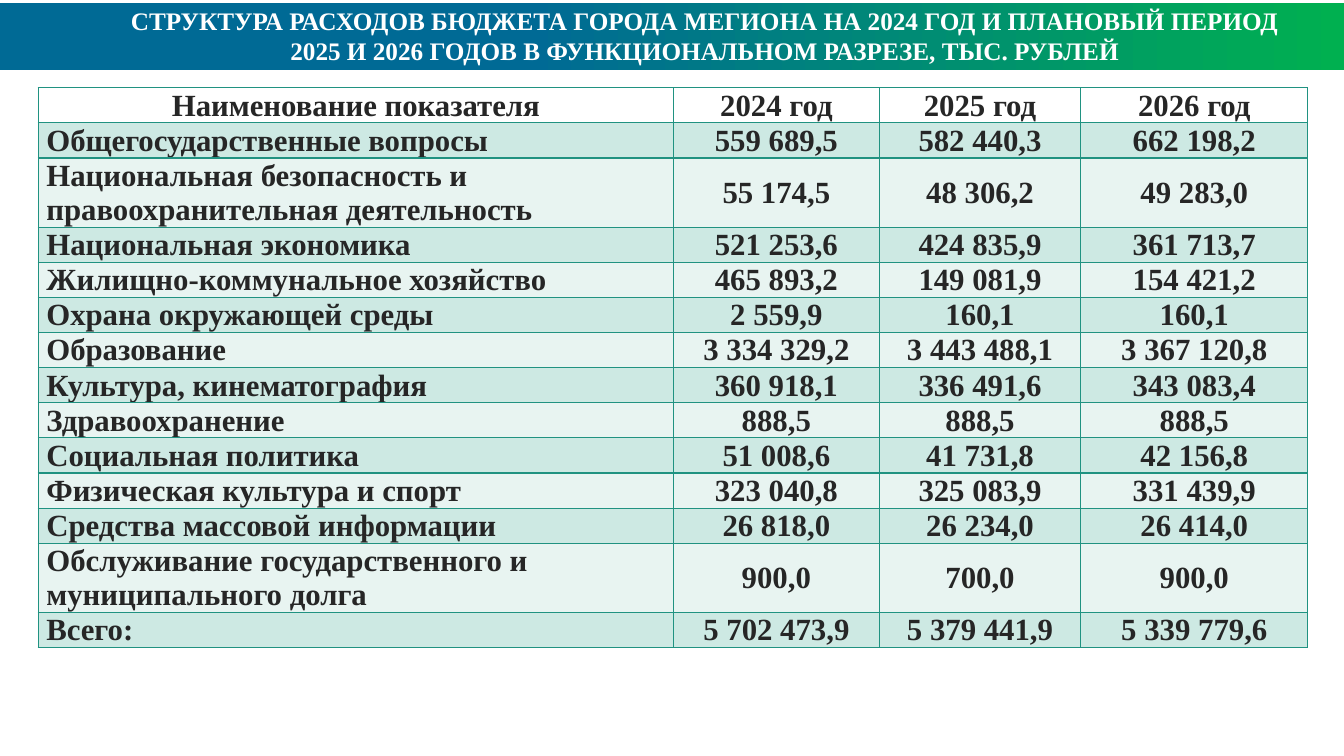
import pptx
import pptx.dml.color
import pptx.enum.shapes
import pptx.enum.text
import pptx.oxml
import pptx.oxml.ns
import pptx.util

Inches = pptx.util.Inches
Pt = pptx.util.Pt
RGB = pptx.dml.color.RGBColor.from_string
ALIGN = pptx.enum.text.PP_ALIGN
ANCHOR = pptx.enum.text.MSO_ANCHOR

HEADING = (
    "СТРУКТУРА РАСХОДОВ БЮДЖЕТА ГОРОДА МЕГИОНА НА 2024 ГОД И ПЛАНОВЫЙ ПЕРИОД",
    "2025 И 2026 ГОДОВ В ФУНКЦИОНАЛЬНОМ РАЗРЕЗЕ, ТЫС. РУБЛЕЙ",
)
COLUMNS = ("Наименование показателя", "2024 год", "2025 год", "2026 год")
EXPENSES = [
    ("Общегосударственные вопросы", "559 689,5", "582 440,3", "662 198,2"),
    ("Национальная безопасность и правоохранительная деятельность",
     "55 174,5", "48 306,2", "49 283,0"),
    ("Национальная экономика", "521 253,6", "424 835,9", "361 713,7"),
    ("Жилищно-коммунальное хозяйство", "465 893,2", "149 081,9", "154 421,2"),
    ("Охрана окружающей среды", "2 559,9", "160,1", "160,1"),
    ("Образование", "3 334 329,2", "3 443 488,1", "3 367 120,8"),
    ("Культура, кинематография", "360 918,1", "336 491,6", "343 083,4"),
    ("Здравоохранение", "888,5", "888,5", "888,5"),
    ("Социальная политика", "51 008,6", "41 731,8", "42 156,8"),
    ("Физическая культура и спорт", "323 040,8", "325 083,9", "331 439,9"),
    ("Средства массовой информации", "26 818,0", "26 234,0", "26 414,0"),
    ("Обслуживание государственного и муниципального долга",
     "900,0", "700,0", "900,0"),
    ("Всего:", "5 702 473,9", "5 379 441,9", "5 339 779,6"),
]
COLUMN_WIDTHS = (6.3, 2.04, 2, 2.25)
LINE_HEIGHT = 0.34
CHARS_PER_LINE = 40

THEME = {
    "font": "Times New Roman",
    "heading_size": 18,
    "table_size": 22,
    "heading_text": "FFFFFF",
    "table_text": "262626",
    "band": ((0.39, "006A95"), (1, "00B050")),
    "header_fill": "FFFFFF",
    "row_fills": ("CDE9E3", "E8F4F1"),
    "border": "209281",
    "border_width": 1,
}


def apply(target, values):
    for name, value in values.items():
        setattr(target, name, value)


def style_runs(paragraph, size, color):
    for run in paragraph.runs:
        apply(run.font, {"name": THEME["font"], "size": Pt(size), "bold": True})
        run.font.color.rgb = RGB(color)


def add_borders(cell):
    properties = cell._tc.get_or_add_tcPr()
    for position, side in enumerate("LRTB"):
        properties.insert(position, pptx.oxml.parse_xml(
            f'<a:ln{side} {pptx.oxml.ns.nsdecls("a")} w="{Pt(THEME["border_width"])}">'
            f'<a:solidFill><a:srgbClr val="{THEME["border"]}"/></a:solidFill>'
            f'</a:ln{side}>'))


def add_band(slide, width):
    band = slide.shapes.add_shape(
        pptx.enum.shapes.MSO_SHAPE.RECTANGLE, 0, Inches(0.03), width, Inches(0.67))
    band.shadow.inherit = False
    band.line.fill.background()
    band.fill.gradient()
    band.fill.gradient_angle = 0
    for stop, (position, color) in zip(band.fill.gradient_stops, THEME["band"]):
        stop.color.rgb = RGB(color)
        stop.position = position


def add_heading(slide):
    heading = slide.shapes.add_textbox(
        Inches(0.68), 0, Inches(12.62), Inches(0.71)).text_frame
    heading.word_wrap = True
    heading.text = "\v".join(HEADING)
    heading.paragraphs[0].alignment = ALIGN.CENTER
    style_runs(heading.paragraphs[0], THEME["heading_size"], THEME["heading_text"])


def add_expense_table(slide):
    rows = [COLUMNS, *EXPENSES]
    heights = [LINE_HEIGHT * (2 if len(row[0]) > CHARS_PER_LINE else 1) for row in rows]
    expenses = slide.shapes.add_table(
        len(rows), len(COLUMNS), Inches(0.38), Inches(0.87),
        Inches(sum(COLUMN_WIDTHS)), Inches(sum(heights))).table
    apply(expenses, {"first_row": False, "horz_banding": False})
    for column, width in zip(expenses.columns, COLUMN_WIDTHS):
        column.width = Inches(width)
    for r, row in enumerate(rows):
        expenses.rows[r].height = Inches(heights[r])
        fill = THEME["row_fills"][(r - 1) % 2] if r else THEME["header_fill"]
        for c, text in enumerate(row):
            is_label = r > 0 and c == 0
            cell = expenses.cell(r, c)
            apply(cell, {
                "text": text,
                "vertical_anchor": ANCHOR.MIDDLE,
                "margin_left": Inches(0.08 if is_label else 0.01),
                "margin_right": Inches(0.01),
                "margin_top": Inches(0.01),
                "margin_bottom": 0,
            })
            cell.fill.solid()
            cell.fill.fore_color.rgb = RGB(fill)
            add_borders(cell)
            paragraph = cell.text_frame.paragraphs[0]
            paragraph.alignment = ALIGN.LEFT if is_label else ALIGN.CENTER
            style_runs(paragraph, THEME["table_size"], THEME["table_text"])


def main():
    deck = pptx.Presentation()
    apply(deck, {"slide_width": Inches(13.33), "slide_height": Inches(7.5)})
    slide = deck.slides.add_slide(deck.slide_layouts[6])
    add_band(slide, deck.slide_width)
    add_expense_table(slide)
    add_heading(slide)
    deck.save("out.pptx")


if __name__ == "__main__":
    main()
